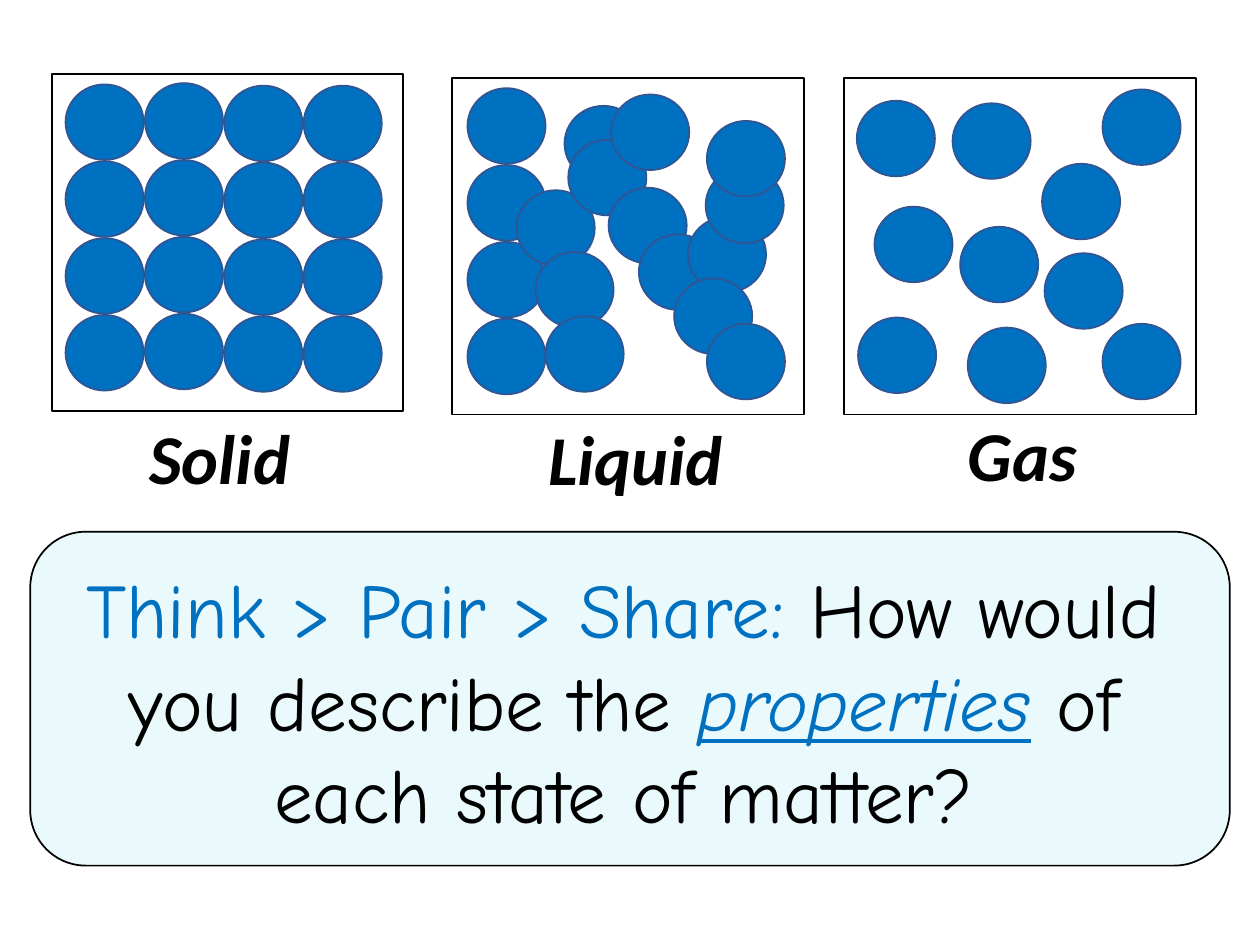
"""Build a slide comparing the particles of a solid, a liquid and a gas."""
from pptx import Presentation
from pptx.dml.color import RGBColor
from pptx.enum.shapes import MSO_SHAPE
from pptx.enum.text import MSO_AUTO_SIZE, PP_ALIGN
from pptx.util import Inches, Pt

RECTANGLE = MSO_SHAPE.RECTANGLE
ROUNDED = MSO_SHAPE.ROUNDED_RECTANGLE
OVAL = MSO_SHAPE.OVAL
CENTER = PP_ALIGN.CENTER
FIT_TEXT = MSO_AUTO_SIZE.SHAPE_TO_FIT_TEXT

BLACK = RGBColor(0x00, 0x00, 0x00)
WHITE = RGBColor(0xFF, 0xFF, 0xFF)
BLUE = RGBColor(0x00, 0x70, 0xC0)
OUTLINE = RGBColor(0x32, 0x54, 0x91)
PALE_BLUE = RGBColor(0xEA, 0xF9, 0xFC)

presentation = Presentation()
presentation.slide_width = Inches(10)
presentation.slide_height = Inches(7.5)
slide = presentation.slides.add_slide(presentation.slide_layouts[6])


def add_figure(kind, left, top, width, height, fill, line):
    shape = slide.shapes.add_shape(
        kind, Inches(left), Inches(top), Inches(width), Inches(height))
    shape.shadow.inherit = False
    shape.fill.solid()
    shape.fill.fore_color.rgb = fill
    shape.line.color.rgb = line
    shape.line.width = Pt(1)


def add_text(runs, left, top, width, height, font, size, bold=None):
    box = slide.shapes.add_textbox(
        Inches(left), Inches(top), Inches(width), Inches(height))
    box.text_frame.word_wrap = True
    box.text_frame.auto_size = FIT_TEXT
    paragraph = box.text_frame.paragraphs[0]
    paragraph.alignment = CENTER
    for text, color, italic, underline in runs:
        run = paragraph.add_run()
        run.text = text
        run.font.name = font
        run.font.size = Pt(size)
        run.font.bold = bold
        run.font.italic = italic
        run.font.underline = underline
        run.font.color.rgb = color


add_figure(ROUNDED, 0.24, 4.22, 9.52, 2.65, PALE_BLUE, BLACK)
question = [
    ("Think > Pair > Share: ", BLUE, False, False),
    ("How would you describe the ", BLACK, False, False),
    ("properties", BLUE, True, True),
    (" of each state of matter?", BLACK, False, False),
]
add_text(question, 0.24, 4.41, 9.42, 2.32, "Comic Neue", 44)

column_tops = [0.67, 0.66, 0.68, 0.68]
solid = [(0.52 + 0.63 * column, top + 0.61 * row)
         for column, top in enumerate(column_tops) for row in range(4)]
liquid = [(3.71, 0.7 + 0.61 * row) for row in range(4)] + [
    (4.1, 1.51), (4.25, 2), (4.33, 2.51), (4.48, 0.84), (4.51, 1.11),
    (4.83, 1.49), (5.07, 1.86), (5.46, 1.72), (4.85, 0.75), (5.35, 2.21),
    (5.6, 1.33), (5.61, 2.57), (5.61, 0.96),
]
gas = [
    (6.94, 1.64), (6.8, 0.8), (6.81, 2.52), (7.62, 1.8), (7.56, 0.82),
    (8.29, 2.01), (7.68, 2.6), (8.27, 1.3), (8.75, 0.71), (8.75, 2.57),
]
states = [
    ("Solid", 0.41, 0.59, solid, 0.71, 3.24),
    ("Liquid", 3.59, 0.62, liquid, 4.01, 3.25),
    ("Gas", 6.7, 0.62, gas, 7.08, 3.22),
]
for name, left, top, particles, label_left, label_top in states:
    add_figure(RECTANGLE, left, top, 2.79, 2.67, WHITE, BLACK)
    for particle_left, particle_top in particles:
        add_figure(OVAL, particle_left, particle_top, 0.62, 0.6, BLUE, OUTLINE)
    add_text([(name, BLACK, True, False)], label_left, label_top, 2.07, 0.77,
             "Calibri", 40, bold=True)

presentation.save("out.pptx")
